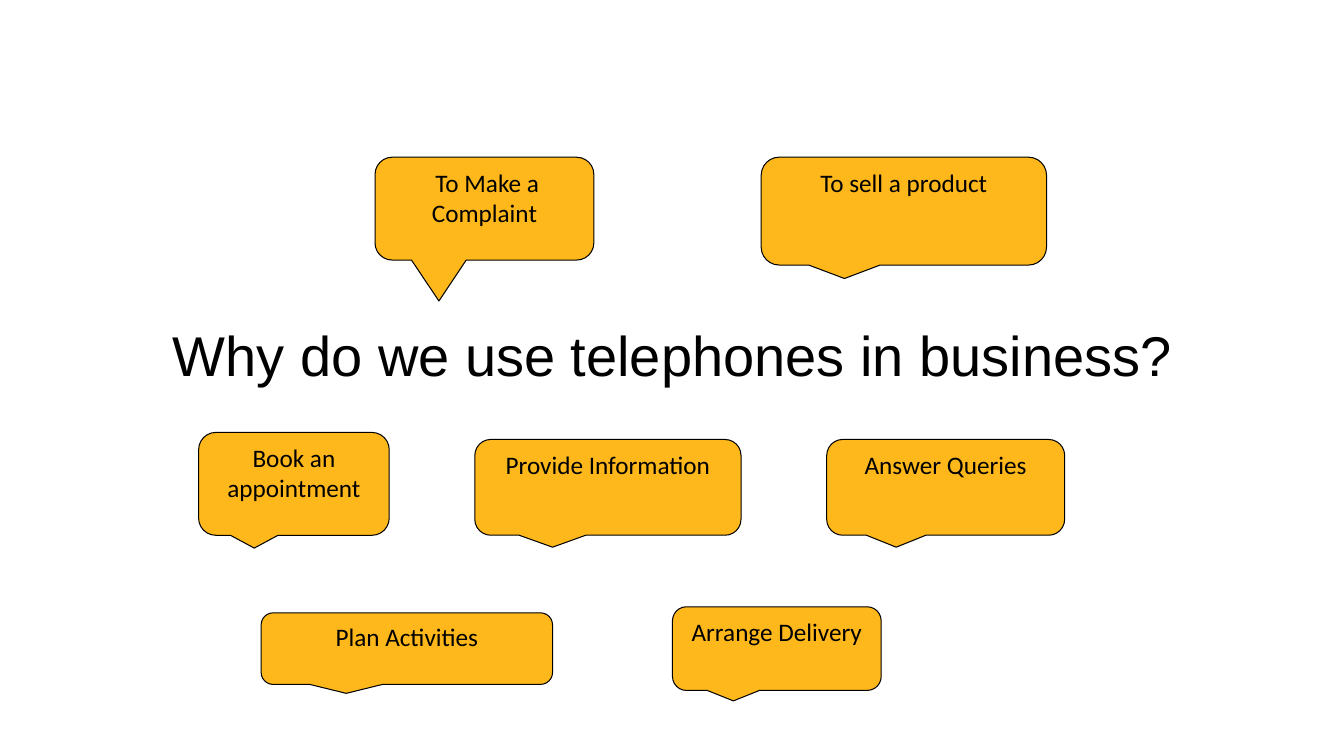
import pptx
import pptx.util
import pptx.dml.color
import pptx.enum.shapes
import pptx.enum.text

Inches = pptx.util.Inches
COLOURS = {"callout": "FFB81C", "ink": "000000"}
QUESTION = "Why do we use telephones in business?"
DEFAULT_TAIL = (-0.208, 0.625, 0.167)
LONG_TAIL = (-0.208, 0.898, 0.167)
REASONS = [
    (" To Make a Complaint", (3.72, 1.56, 2.17, 1.02), LONG_TAIL),
    ("Book an appointment", (1.97, 4.29, 1.89, 1.02), DEFAULT_TAIL),
    ("To sell a product", (7.55, 1.56, 2.83, 1.07), DEFAULT_TAIL),
    ("Provide Information", (4.71, 4.36, 2.64, 0.95), DEFAULT_TAIL),
    ("Answer Queries", (8.2, 4.36, 2.36, 0.95), DEFAULT_TAIL),
    ("Plan Activities", (2.59, 6.08, 2.89, 0.71), DEFAULT_TAIL),
    ("Arrange Delivery", (6.67, 6.02, 2.07, 0.83), DEFAULT_TAIL),
]


def colour(name):
    """Return the named colour."""
    return pptx.dml.color.RGBColor.from_string(COLOURS[name])


def write_text(frame, text, font, size, anchor):
    """Write one centred run into a text frame."""
    frame.word_wrap = True
    frame.auto_size = pptx.enum.text.MSO_AUTO_SIZE.NONE
    frame.vertical_anchor = anchor
    para = frame.paragraphs[0]
    para.alignment = pptx.enum.text.PP_ALIGN.CENTER
    span = para.add_run()
    span.text = text
    span.font.name = font
    span.font.size = pptx.util.Pt(size)
    span.font.color.rgb = colour("ink")
    return para


def place_question(page, box):
    """Place the question in the title placeholder."""
    title = page.shapes.title
    title.left, title.top, title.width, title.height = map(Inches, box)
    para = write_text(title.text_frame, QUESTION, "Arial", 40,
                      pptx.enum.text.MSO_ANCHOR.BOTTOM)
    para.line_spacing = 0.9


def add_reason(page, text, box, tail):
    """Add a speech callout giving one reason to telephone."""
    callout = page.shapes.add_shape(
        pptx.enum.shapes.MSO_SHAPE.ROUNDED_RECTANGULAR_CALLOUT, *map(Inches, box))
    for index, value in enumerate(tail):
        callout.adjustments[index] = value
    callout.shadow.inherit = False
    callout.fill.solid()
    callout.fill.fore_color.rgb = colour("callout")
    callout.line.color.rgb = colour("ink")
    callout.line.width = pptx.util.Pt(0.75)
    write_text(callout.text_frame, text, "Calibri", 18,
               pptx.enum.text.MSO_ANCHOR.TOP)


def main():
    """Build and save the slide."""
    deck = pptx.Presentation()
    deck.slide_width, deck.slide_height = Inches(13.33), Inches(7.5)
    page = deck.slides.add_slide(deck.slide_layouts.get_by_name("Title Only"))
    place_question(page, (1.54, 3.2, 10.25, 0.71))
    for text, box, tail in REASONS:
        add_reason(page, text, box, tail)
    deck.save("out.pptx")


if __name__ == "__main__":
    main()
